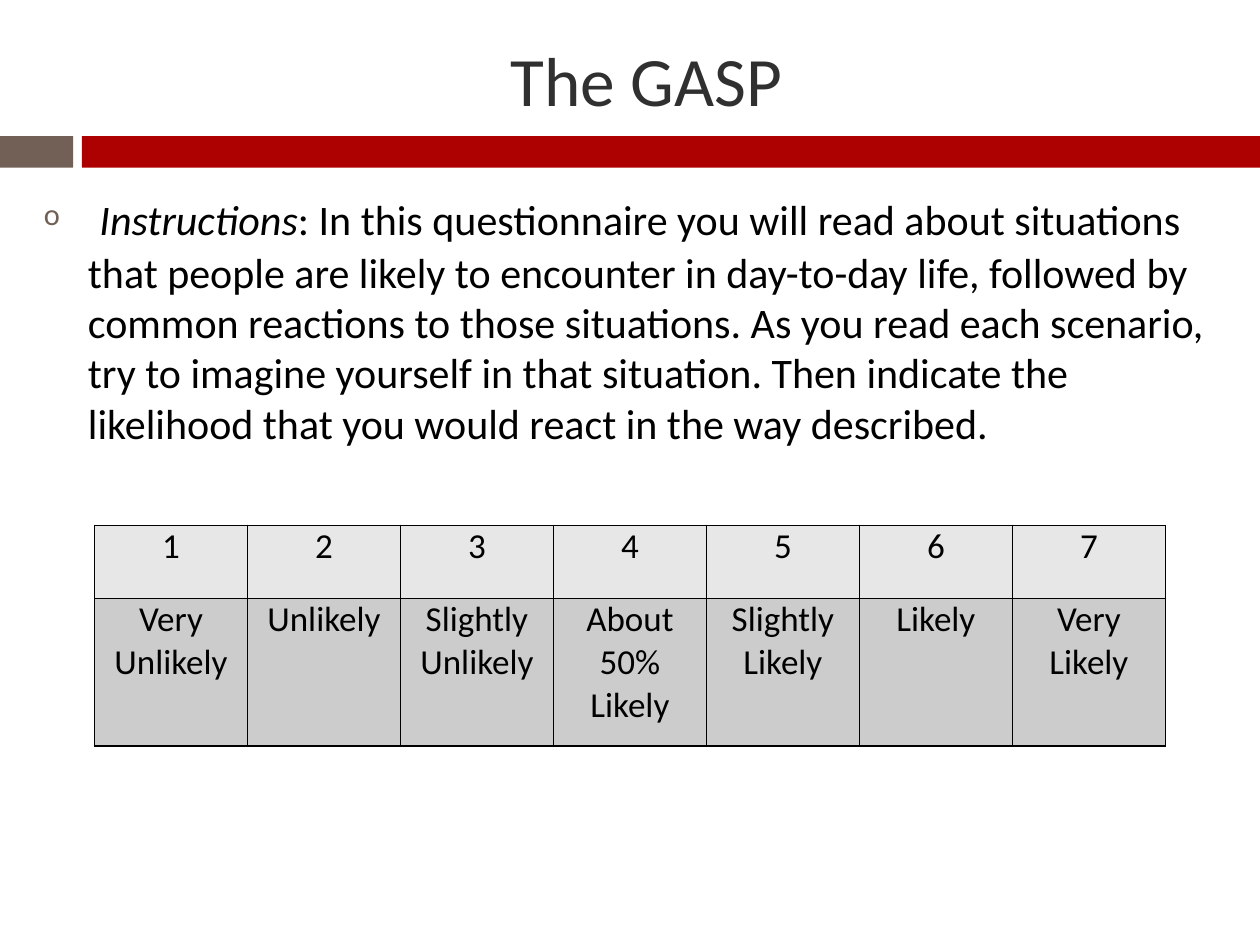
from lxml import etree
from pptx import Presentation
from pptx.dml.color import RGBColor
from pptx.enum.shapes import MSO_SHAPE
from pptx.enum.text import MSO_ANCHOR, PP_ALIGN
from pptx.oxml.ns import qn
from pptx.util import Inches, Pt

RECTANGLE = MSO_SHAPE.RECTANGLE
CENTER = PP_ALIGN.CENTER
MIDDLE = MSO_ANCHOR.MIDDLE

BLACK = RGBColor(0x00, 0x00, 0x00)
CHARCOAL = RGBColor(0x30, 0x30, 0x30)
BROWN = RGBColor(0x72, 0x60, 0x56)
RED = RGBColor(0xAD, 0x01, 0x01)
LIGHT_GRAY = RGBColor(0xE7, 0xE7, 0xE7)
MID_GRAY = RGBColor(0xCC, 0xCC, 0xCC)

INSTRUCTIONS = (
    ": In this questionnaire you will read about situations that people are "
    "likely to encounter in day-to-day life, followed by common reactions to "
    "those situations. As you read each scenario, try to imagine yourself in "
    "that situation. Then indicate the likelihood that you would react in the "
    "way described."
)
SCALE = [
    ("1", "Very Unlikely"),
    ("2", "Unlikely"),
    ("3", "Slightly Unlikely"),
    ("4", "About 50% Likely"),
    ("5", "Slightly Likely"),
    ("6", "Likely"),
    ("7", "Very Likely"),
]


class SlideBuilder:
    """Holds the font and the current page, and adds elements to it."""

    font_name = "Calibri"

    def __init__(self, page):
        self.page = page

    def bar(self, left, top, width, height, color):
        shape = self.page.shapes.add_shape(
            RECTANGLE, Inches(left), Inches(top), Inches(width), Inches(height))
        shape.shadow.inherit = False
        shape.fill.solid()
        shape.fill.fore_color.rgb = color
        shape.line.fill.background()

    def span(self, para, text, size, color=BLACK, italic=False):
        span = para.add_run()
        span.text = text
        formats = {"name": self.font_name, "size": Pt(size), "italic": italic}
        for name, value in formats.items():
            setattr(span.font, name, value)
        span.font.color.rgb = color

    def text_box(self, left, top, width, height, anchor=None):
        """Add a wrapping text box and return its first paragraph."""
        box = self.page.shapes.add_textbox(
            Inches(left), Inches(top), Inches(width), Inches(height))
        box.text_frame.word_wrap = True
        box.text_frame.vertical_anchor = anchor
        return box.text_frame.paragraphs[0]

    def bullet(self, para, char, color, percent, indent):
        props = para._p.get_or_add_pPr()
        props.set("marL", str(Inches(indent)))
        props.set("indent", str(-Inches(indent)))
        bullet_color = etree.SubElement(props, qn("a:buClr"))
        etree.SubElement(bullet_color, qn("a:srgbClr"), val=str(color))
        etree.SubElement(props, qn("a:buSzPct"), val=str(percent * 1000))
        etree.SubElement(props, qn("a:buFont"), typeface=self.font_name)
        etree.SubElement(props, qn("a:buChar"), char=char)

    def borders(self, cell, color, width):
        props = cell._tc.get_or_add_tcPr()
        for side in ("lnL", "lnR", "lnT", "lnB"):
            line = etree.SubElement(props, qn(f"a:{side}"), w=str(Pt(width)))
            fill = etree.SubElement(line, qn("a:solidFill"))
            etree.SubElement(fill, qn("a:srgbClr"), val=str(color))

    def table(self, left, top, width, row_heights, rows, row_fills, size):
        table = self.page.shapes.add_table(
            len(rows), len(rows[0]), Inches(left), Inches(top),
            Inches(width), Inches(sum(row_heights))).table
        for row, height in zip(table.rows, row_heights):
            row.height = Inches(height)
        cell_format = {
            "margin_left": Inches(0.07), "margin_right": Inches(0.07),
            "margin_top": 0, "margin_bottom": 0,
        }
        for row, texts, color in zip(table.rows, rows, row_fills):
            for cell, text in zip(row.cells, texts):
                for name, value in cell_format.items():
                    setattr(cell, name, value)
                self.borders(cell, BLACK, 1)
                cell.fill.solid()
                cell.fill.fore_color.rgb = color
                para = cell.text_frame.paragraphs[0]
                para.alignment = CENTER
                self.span(para, text, size)


def main():
    deck = Presentation()
    deck.slide_width, deck.slide_height = Inches(10), Inches(7.5)
    builder = SlideBuilder(deck.slides.add_slide(deck.slide_layouts[6]))

    builder.bar(0, 1.08, 0.58, 0.25, BROWN)
    builder.bar(0.65, 1.08, 9.35, 0.25, RED)

    body = builder.text_box(0.25, 1.42, 9.5, 5.58)
    body.space_before = Pt(7)
    builder.bullet(body, "o", BROWN, percent=60, indent=0.35)
    builder.span(body, " ", 29)
    builder.span(body, "Instructions", 24, italic=True)
    builder.span(body, INSTRUCTIONS, 24)

    title = builder.text_box(0.67, 0.25, 8.92, 0.75, MIDDLE)
    title.alignment = CENTER
    builder.span(title, "The GASP", 39.6, CHARCOAL)

    builder.table(0.75, 4.17, 8.5, [0.58, 1.17], list(zip(*SCALE)),
                  [LIGHT_GRAY, MID_GRAY], 20)
    deck.save("out.pptx")


if __name__ == "__main__":
    main()
